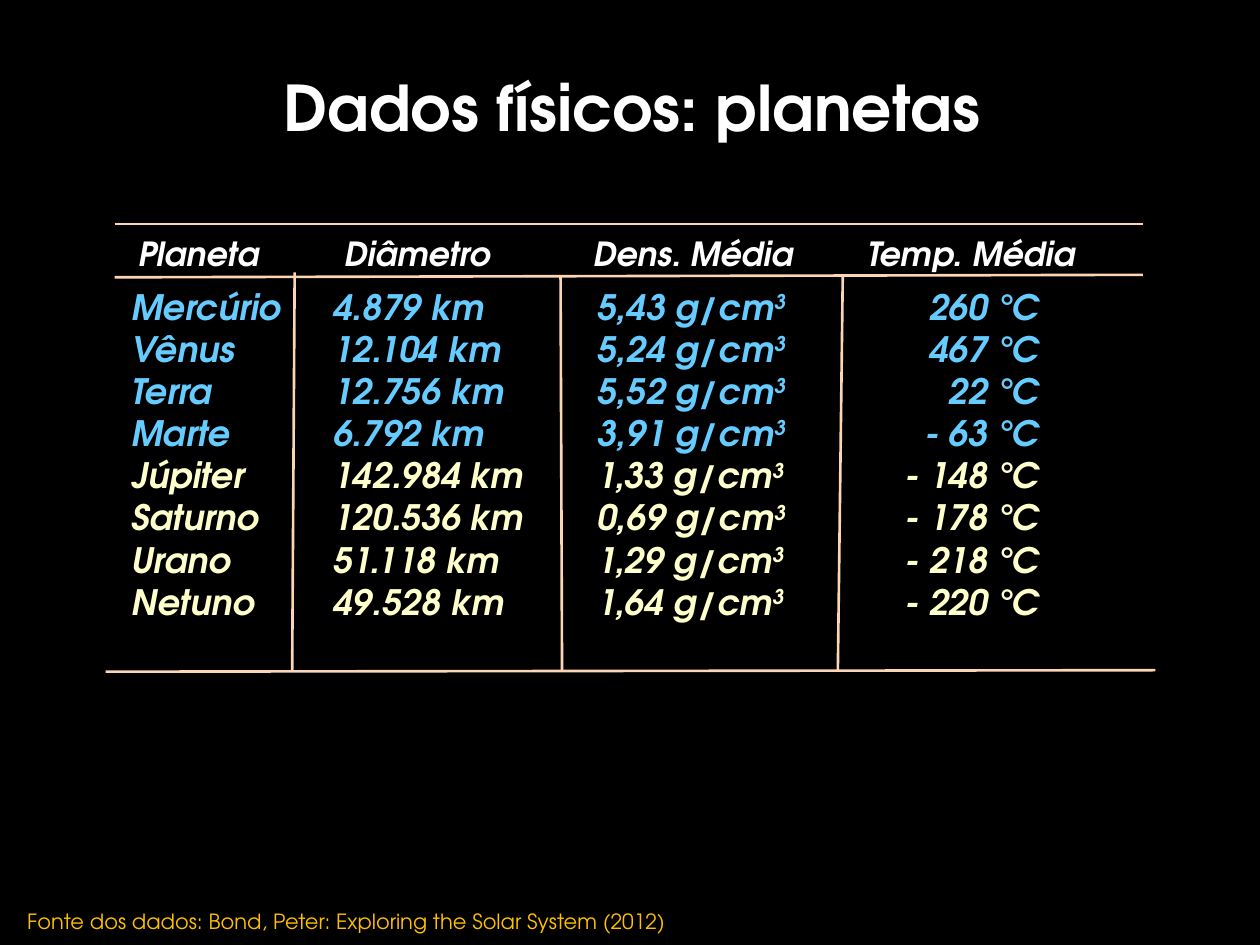
from lxml.etree import SubElement
from pptx import Presentation
from pptx.dml.color import RGBColor
from pptx.enum.shapes import MSO_CONNECTOR as Connector
from pptx.enum.text import MSO_ANCHOR as Anchor, PP_ALIGN as Align
from pptx.oxml.ns import qn
from pptx.util import Cm, Pt

FONT = "TeX Gyre Adventor"
WHITE, ROCKY, GASEOUS = "FFFFFF", "66CCFF", "FFFFCC"
RULE, SOURCE = "FCD5B5", "FFC000"

HEADERS = ["Planeta", "Diâmetro", "Dens. Média", "Temp. Média"]
PLANETS = [
    ("Mercúrio", "4.879", "5,43", "260"),
    ("Vênus", "12.104", "5,24", "467"),
    ("Terra", "12.756", "5,52", "22"),
    ("Marte", "6.792", "3,91", "- 63"),
    ("Júpiter", "142.984", "1,33", "- 148"),
    ("Saturno", "120.536", "0,69", "- 178"),
    ("Urano", "51.118", "1,29", "- 218"),
    ("Netuno", "49.528", "1,64", "- 220"),
]
ROCKY_COUNT = 4
COLUMN_WIDTHS = [3.79, 5.4, 5.62, 6.35]
ROW_HEIGHTS = [1.49] + [0.85] * len(PLANETS)
HEADER_INDENTS = [0.66, 1.02, 0.64, 0.54]
BODY_INDENTS = [0.52, 0.8, 0.72, 0]
TEMPERATURE_RIGHT = 2.34
RULES = [
    (5.94, 5.49, 5.89, 13.51),
    (2.13, 13.54, 23.29, 13.51),
    (11.3, 5.56, 11.33, 13.51),
    (16.99, 5.56, 16.89, 13.51),
    (2.31, 4.52, 23.04, 4.52),
    (2.31, 5.59, 23.04, 5.54),
]


def color(hex_string):
    return RGBColor.from_string(hex_string)


class SlideBuilder:
    def __init__(self, presentation, background):
        self.slide = presentation.slides.add_slide(presentation.slide_layouts[5])
        fill = self.slide.background.fill
        fill.solid()
        fill.fore_color.rgb = color(background)

    def run(self, paragraph, text, size, hex_color, bold=False, italic=False, superscript=False):
        run = paragraph.add_run()
        run.text = text
        font = run.font
        font.name, font.size, font.bold, font.italic = FONT, Pt(size), bold, italic
        font.color.rgb = color(hex_color)
        if superscript:
            run._r.get_or_add_rPr().set("baseline", "30000")

    def title(self, text, left, top, width, height):
        shape = self.slide.shapes.title
        shape.left, shape.top, shape.width, shape.height = map(Cm, (left, top, width, height))
        shape.text_frame.vertical_anchor = Anchor.MIDDLE
        paragraph = shape.text_frame.paragraphs[0]
        paragraph.alignment = Align.CENTER
        self.run(paragraph, text, 36, WHITE, bold=True)

    def text(self, text, left, top, width, height, size, hex_color):
        shape = self.slide.shapes.add_textbox(*map(Cm, (left, top, width, height)))
        shape.text_frame.word_wrap = True
        self.run(shape.text_frame.paragraphs[0], text, size, hex_color)

    def line(self, *ends):
        connector = self.slide.shapes.add_connector(Connector.STRAIGHT, *map(Cm, ends))
        connector.line.color.rgb = color(RULE)
        connector.line.width = Pt(1.5)
        SubElement(connector._element.spPr, qn("a:effectLst"))

    def table(self, left, top, widths, heights):
        frame = self.slide.shapes.add_table(
            len(heights), len(widths), Cm(left), Cm(top), Cm(sum(widths)), Cm(sum(heights)))
        table = frame.table
        table.first_row = table.horz_banding = False
        for column, width in zip(table.columns, widths):
            column.width = Cm(width)
        for row, height in zip(table.rows, heights):
            row.height = Cm(height)
        return table

    def cell(self, cell, runs, size, hex_color, indent, anchor, right=None):
        """Fill a cell, without borders, with (text, superscript) runs.

        A right margin, when given, also aligns the text to the right.
        """
        cell.margin_left, cell.margin_right = Cm(indent), Cm(right or 0)
        cell.margin_top = cell.margin_bottom = 0
        cell.vertical_anchor = anchor
        paragraph = cell.text_frame.paragraphs[0]
        paragraph.alignment = Align.RIGHT if right else Align.LEFT
        for text, superscript in runs:
            self.run(paragraph, text, size, hex_color, True, True, superscript)
        properties = cell._tc.get_or_add_tcPr()
        for side in "LRTB":
            SubElement(SubElement(properties, qn(f"a:ln{side}")), qn("a:noFill"))
        cell.fill.background()


def planet_table(builder):
    table = builder.table(2.13, 4.44, COLUMN_WIDTHS, ROW_HEIGHTS)
    for column, header in enumerate(HEADERS):
        builder.cell(table.cell(0, column), [(header, False)], 19, WHITE,
                     HEADER_INDENTS[column], Anchor.MIDDLE)
    for row, (name, diameter, density, temperature) in enumerate(PLANETS, start=1):
        hex_color = ROCKY if row <= ROCKY_COUNT else GASEOUS
        contents = [
            [(name, False)],
            [(f"{diameter} km", False)],
            [(f"{density} g/cm", False), ("3", True)],
            [(f"{temperature} °C", False)],
        ]
        for column, runs in enumerate(contents):
            right = TEMPERATURE_RIGHT if column == 3 else None
            builder.cell(table.cell(row, column), runs, 20, hex_color,
                         BODY_INDENTS[column], Anchor.TOP, right)


def main():
    presentation = Presentation()
    presentation.slide_width, presentation.slide_height = Cm(25.4), Cm(19.05)
    builder = SlideBuilder(presentation, "000000")
    builder.title("Dados físicos: planetas", -0.32, 0.56, 26.11, 3.18)
    planet_table(builder)
    for ends in RULES:
        builder.line(*ends)
    builder.text("Fonte dos dados: Bond, Peter: Exploring the Solar System (2012)",
                 0.3, 18.19, 18.16, 0.76, 12, SOURCE)
    presentation.save("out.pptx")


if __name__ == "__main__":
    main()
